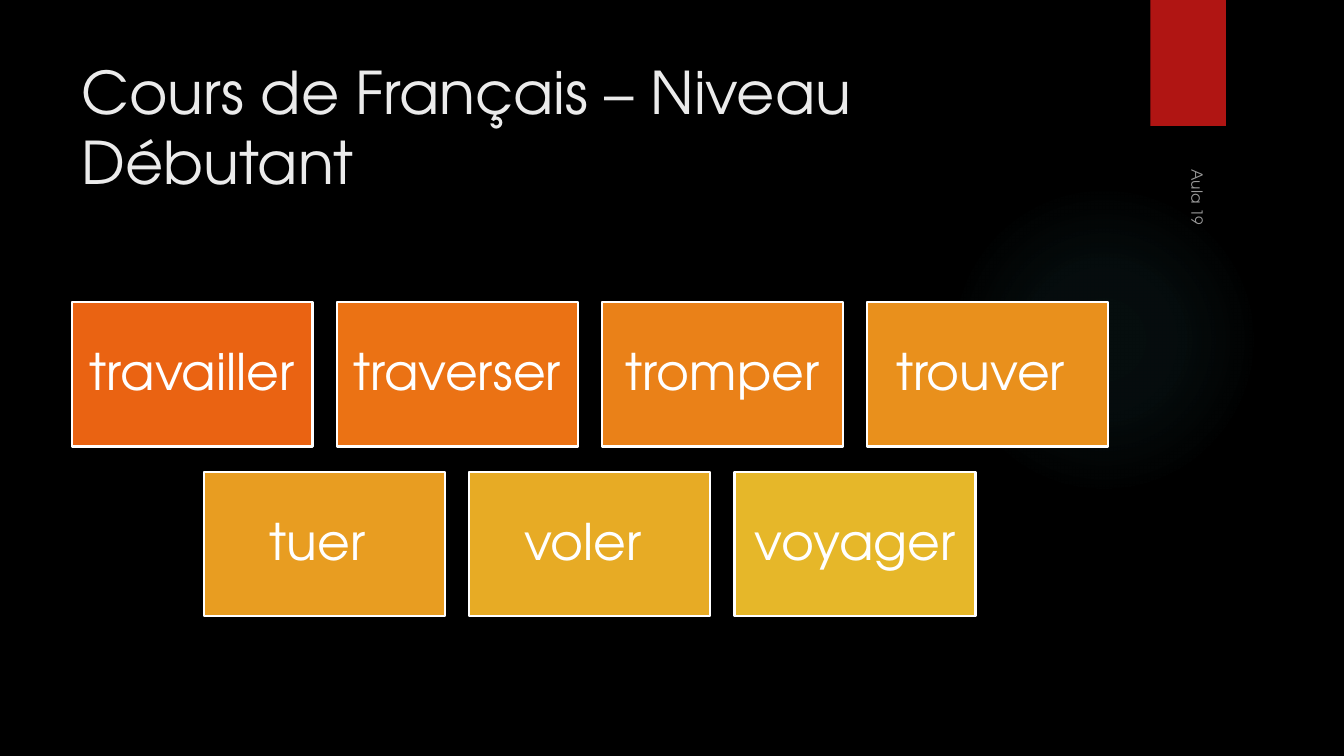
from pptx import Presentation
from pptx.dml.color import RGBColor
from pptx.enum.shapes import MSO_SHAPE
from pptx.enum.text import MSO_ANCHOR, PP_ALIGN
from pptx.oxml import parse_xml
from pptx.oxml.ns import nsdecls, qn
from pptx.util import Inches, Pt

FONT = "TeX Gyre Adventor"
CARD_WIDTH, CARD_HEIGHT, CARD_GAP = 2.39, 1.43, 0.24
ROWS_CENTER, ROWS_TOP, ROW_STEP = 5.85, 3, 1.68
VERB_ROWS = [
    [("travailler ", "EA6312"), ("traverser ", "EB7214"),
     ("tromper", "EA8118"), ("trouver ", "E9901C")],
    [("tuer ", "E89D21"), ("voler ", "E7AB25"), ("voyager ", "E6B729")],
]


def color(value):
    """Return the colour for a hex string."""
    return RGBColor.from_string(value)


def write_text(shape, text, size, text_color, anchor):
    """Set one wrapped paragraph in a shape and return it."""
    frame = shape.text_frame
    frame.text = text
    frame.word_wrap = True
    frame.vertical_anchor = anchor
    paragraph = frame.paragraphs[0]
    font = paragraph.runs[0].font
    font.name = FONT
    font.size = Pt(size)
    font.color.rgb = color(text_color)
    return paragraph


def add_box(slide, left, top, width, height, fill):
    """Add a plain filled rectangle without an outline."""
    shape = slide.shapes.add_shape(
        MSO_SHAPE.RECTANGLE, Inches(left), Inches(top), Inches(width), Inches(height))
    shape.shadow.inherit = False
    shape.fill.solid()
    shape.fill.fore_color.rgb = color(fill)
    shape.line.fill.background()
    return shape


def add_glow(slide, left, top, size, tint):
    """Add a circle whose faint tint fades out from its centre."""
    shape = slide.shapes.add_shape(
        MSO_SHAPE.OVAL, Inches(left), Inches(top), Inches(size), Inches(size))
    shape.shadow.inherit = False
    shape.line.fill.background()
    shape.fill.background()
    stops = "".join(
        f'<a:gs pos="{position * 1000}"><a:srgbClr val="{tint}">'
        f'<a:alpha val="{opacity * 1000}"/></a:srgbClr></a:gs>'
        for position, opacity in [(0, 7), (36, 6), (69, 0), (100, 0)])
    gradient = parse_xml(
        f'<a:gradFill {nsdecls("a")}><a:gsLst>{stops}</a:gsLst><a:path path="circle">'
        '<a:fillToRect l="50000" t="50000" r="50000" b="50000"/></a:path></a:gradFill>')
    properties = shape.element.spPr
    properties.replace(properties.find(qn("a:noFill")), gradient)


def add_title(slide, text):
    """Add the slide title."""
    box = slide.shapes.add_textbox(Inches(0.71), Inches(0.5), Inches(10.29), Inches(1.53))
    write_text(box, text, 42, "EBEBEB", MSO_ANCHOR.TOP)


def add_lesson_label(slide, text):
    """Add the sideways, translucent lesson label."""
    box = slide.shapes.add_textbox(Inches(9.79), Inches(3.53), Inches(4.22), Inches(0.33))
    box.rotation = 90
    paragraph = write_text(box, text, 11, "FFFFFF", MSO_ANCHOR.BOTTOM)
    white = paragraph.runs[0].font.fill._xPr.find(".//" + qn("a:srgbClr"))
    white.append(parse_xml(f'<a:alpha {nsdecls("a")} val="60000"/>'))


def add_verb_card(slide, left, top, verb, fill):
    """Add a white-edged card holding one verb."""
    card = add_box(slide, left, top, CARD_WIDTH, CARD_HEIGHT, fill)
    card.line.color.rgb = color("FFFFFF")
    card.line.width = Pt(1.5)
    paragraph = write_text(card, verb, 36, "FFFFFF", MSO_ANCHOR.MIDDLE)
    paragraph.alignment = PP_ALIGN.CENTER
    paragraph.line_spacing = 0.9
    frame = card.text_frame
    frame.margin_left = frame.margin_right = Inches(0.15)
    frame.margin_top = frame.margin_bottom = Inches(0.15)


def add_verb_rows(slide):
    """Lay out the verb cards in centred rows."""
    pitch = CARD_WIDTH + CARD_GAP
    for row, verbs in enumerate(VERB_ROWS):
        start = ROWS_CENTER - (len(verbs) * pitch - CARD_GAP) / 2
        for column, (verb, fill) in enumerate(verbs):
            add_verb_card(slide, start + column * pitch, ROWS_TOP + row * ROW_STEP, verb, fill)


def main():
    """Build and save the slide."""
    presentation = Presentation()
    presentation.slide_width = Inches(13.33)
    presentation.slide_height = Inches(7.5)
    slide = presentation.slides.add_slide(presentation.slide_layouts[6])
    slide.background.fill.solid()
    slide.background.fill.fore_color.rgb = color("000000")
    add_glow(slide, 9.41, 1.83, 3.08, "50B9C1")
    add_box(slide, 11.41, 0, 0.75, 1.25, "B01513")
    add_title(slide, "Cours de Français – Niveau Débutant")
    add_lesson_label(slide, "Aula 19")
    add_verb_rows(slide)
    presentation.save("out.pptx")


if __name__ == "__main__":
    main()
